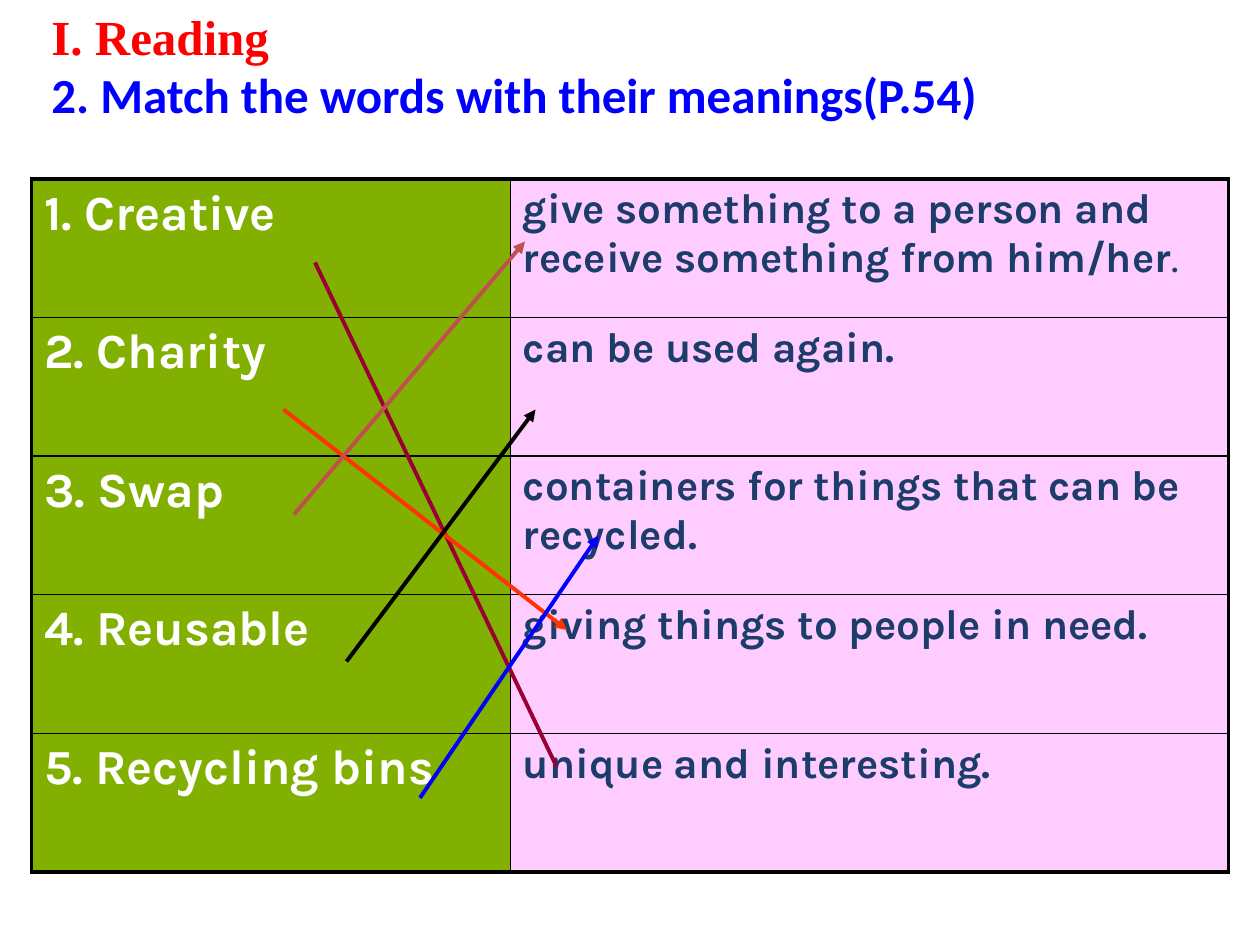
import pptx
import pptx.util
import pptx.dml.color
import pptx.enum.shapes
import pptx.enum.text
import pptx.oxml.ns
from lxml import etree

Inches, Pt = pptx.util.Inches, pptx.util.Pt
RGB = pptx.dml.color.RGBColor

RED, BLUE, BLACK = RGB(255, 0, 0), RGB(0, 0, 255), RGB(0, 0, 0)
WHITE, NAVY = RGB(255, 255, 255), RGB(0x1C, 0x3C, 0x6A)
GREEN, PINK = RGB(0x82, 0xB0, 0x00), RGB(0xFF, 0xCC, 0xFF)
MAROON, ORANGE, BRICK = RGB(0x99, 0, 0x33), RGB(0xFF, 0x33, 0), RGB(0xC0, 0x50, 0x4D)

HEADINGS = [
    ("I. Reading", "Times New Roman", RED),
    ("2. Match the words with their meanings(P.54)", "Calibri", BLUE),
]
# word, meaning, unbolded ending of the meaning
MATCHES = [
    ("1. Creative", "give something to a person and receive something from him/her", "."),
    ("2. Charity", "can be used again.", ""),
    ("3. Swap", "containers for things that can be recycled.", ""),
    ("4. Reusable", "giving things to people in need.", ""),
    ("5. Recycling bins", "unique and interesting.", ""),
]
# start, end (in grid steps), colour, has arrowhead
ANSWERS = [
    ((30, 25), (53, 73), MAROON, False),
    ((27, 39), (54, 60), ORANGE, True),
    ((28, 49), (50, 23), BRICK, True),
    ((33, 63), (51, 39), BLACK, True),
    ((40, 76), (57, 51), BLUE, True),
]
GRID_STEP = Inches(1) / 12
COLUMN_WIDTHS = (3.8, 5.7)
ROW_HEIGHT = 1.1
THIN, THICK = 1, 2.25


def add_run(paragraph, text, font, size, color, bold=True):
    run = paragraph.add_run()
    run.text = text
    run.font.name, run.font.size, run.font.bold = font, Pt(size), bold
    run.font.color.rgb = color


def set_borders(cell, widths):
    """Draw black borders; widths are points by side, in the order L, R, T, B."""
    properties = cell._tc.get_or_add_tcPr()
    for side, width in widths.items():
        border = etree.SubElement(properties, pptx.oxml.ns.qn(f"a:ln{side}"), w=str(Pt(width)))
        fill = etree.SubElement(border, pptx.oxml.ns.qn("a:solidFill"))
        etree.SubElement(fill, pptx.oxml.ns.qn("a:srgbClr"), val=str(BLACK))


def add_matching_table(slide):
    last_row, last_column = len(MATCHES) - 1, len(COLUMN_WIDTHS) - 1
    table = slide.shapes.add_table(
        len(MATCHES), len(COLUMN_WIDTHS), Inches(0.25), Inches(1.42),
        Inches(sum(COLUMN_WIDTHS)), Inches(ROW_HEIGHT * len(MATCHES))).table
    table.first_row = table.horz_banding = False
    for column, width in zip(table.columns, COLUMN_WIDTHS):
        column.width = Inches(width)
    for r, (word, meaning, ending) in enumerate(MATCHES):
        table.rows[r].height = Inches(ROW_HEIGHT)
        for c, background in enumerate((GREEN, PINK)):
            cell = table.cell(r, c)
            set_borders(cell, {
                "L": THICK if c == 0 else THIN,
                "R": THICK if c == last_column else THIN,
                "T": THICK if r == 0 else THIN,
                "B": THICK if r == last_row else THIN,
            })
            cell.fill.solid()
            cell.fill.fore_color.rgb = background
        word_line, meaning_line = (table.cell(r, c).text_frame.paragraphs[0] for c in (0, 1))
        add_run(word_line, word, "Karla", 28, WHITE)
        add_run(meaning_line, meaning, "Karla", 24, NAVY)
        if ending:
            add_run(meaning_line, ending, "Karla", 24, NAVY, bold=False)


def add_answer(slide, start, end, color, has_arrowhead):
    points = [round(step * GRID_STEP) for step in start + end]
    answer = slide.shapes.add_connector(pptx.enum.shapes.MSO_CONNECTOR.STRAIGHT, *points)
    answer.line.color.rgb = color
    answer.line.width = Pt(2.25)
    if has_arrowhead:
        etree.SubElement(answer.line._get_or_add_ln(), pptx.oxml.ns.qn("a:tailEnd"), type="triangle")
    etree.SubElement(answer._element.spPr, pptx.oxml.ns.qn("a:effectLst"))


def add_headings(slide):
    frame = slide.shapes.add_textbox(Inches(0.31), 0, Inches(9.06), Inches(1.04)).text_frame
    frame.word_wrap = True
    frame.auto_size = pptx.enum.text.MSO_AUTO_SIZE.SHAPE_TO_FIT_TEXT
    for i, (heading, font, color) in enumerate(HEADINGS):
        paragraph = frame.add_paragraph() if i else frame.paragraphs[0]
        add_run(paragraph, heading, font, 28, color)


def main():
    deck = pptx.Presentation()
    deck.slide_width, deck.slide_height = Inches(10), Inches(7.5)
    slide = deck.slides.add_slide(deck.slide_layouts[6])
    add_matching_table(slide)
    for answer in ANSWERS:
        add_answer(slide, *answer)
    add_headings(slide)
    deck.save("out.pptx")


if __name__ == "__main__":
    main()
